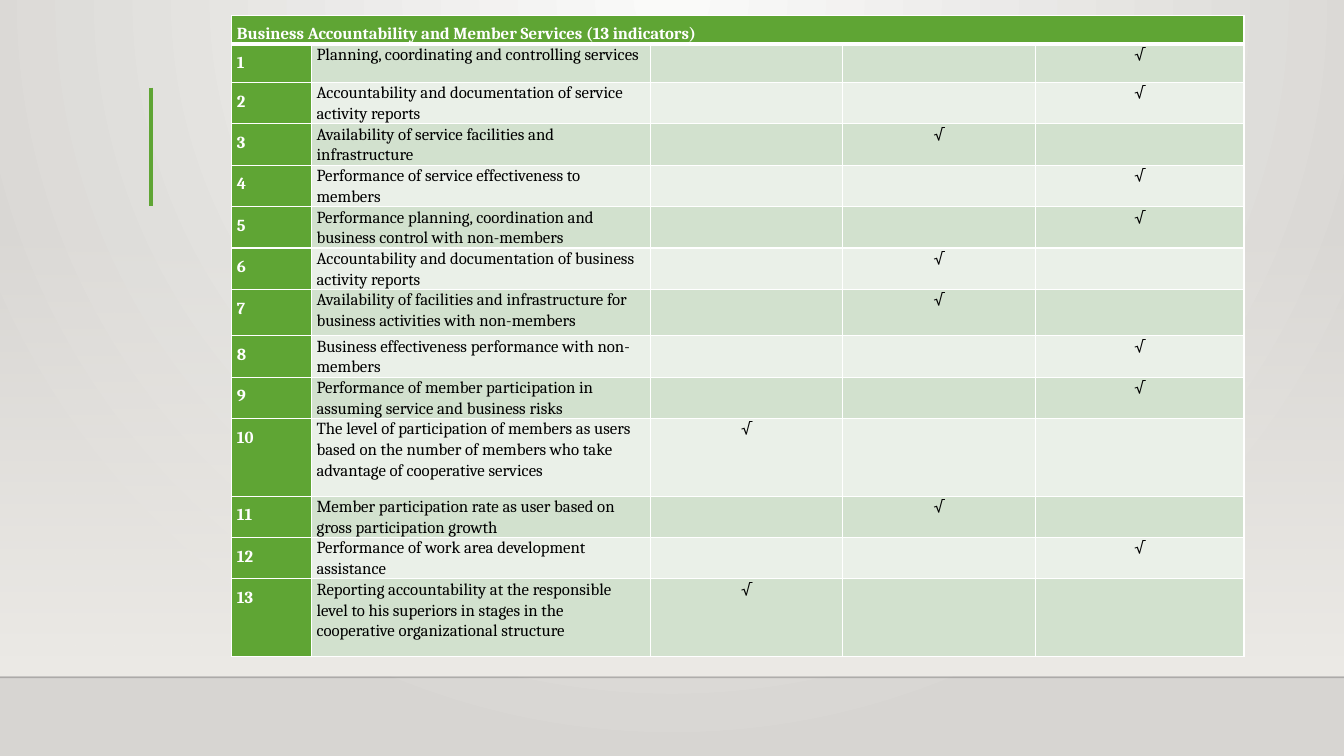
from lxml import etree
from pptx import Presentation
from pptx import util as u
from pptx.dml.color import RGBColor
from pptx.enum import shapes, text
from pptx.oxml import parse_xml
from pptx.oxml.ns import nsdecls, qn

GREEN = RGBColor(0x5F, 0xA5, 0x34)
BAND_DARK = RGBColor(0xD2, 0xE1, 0xCE)
BAND_LIGHT = RGBColor(0xEA, 0xF0, 0xE8)
WHITE = RGBColor(0xFF, 0xFF, 0xFF)
BLACK = RGBColor(0x00, 0x00, 0x00)
RULE = RGBColor(0x00, 0x00, 0x01)
SAND = RGBColor(0xED, 0xEB, 0xE7)
GLOW = RGBColor(0xFA, 0xFA, 0xF9)
EDGE = RGBColor(0xD7, 0xD5, 0xD2)

PX = 9144
WIDTH, HEIGHT = 1333, 750
TITLE = "Business Accountability and Member Services (13 indicators)"
COLUMNS = [79, 336, 191, 191, 207]
LOW, MIDDLE, HIGH = 2, 3, 4
INDICATORS = [
    ("Planning, coordinating and controlling services", HIGH, 38),
    ("Accountability and documentation of service activity reports", HIGH, 38),
    ("Availability of service facilities and infrastructure", MIDDLE, 38),
    ("Performance of service effectiveness to members", HIGH, 38),
    ("Performance planning, coordination and business control with non-members", HIGH, 38),
    ("Accountability and documentation of business activity reports", MIDDLE, 38),
    ("Availability of facilities and infrastructure for business activities with non-members", MIDDLE, 46),
    ("Business effectiveness performance with non-members", HIGH, 38),
    ("Performance of member participation in assuming service and business risks", HIGH, 38),
    ("The level of participation of members as users based on the number of members "
     "who take advantage of cooperative services", LOW, 77),
    ("Member participation rate as user based on gross participation growth", MIDDLE, 38),
    ("Performance of work area development assistance", HIGH, 38),
    ("Reporting accountability at the responsible level to his superiors in stages in the "
     "cooperative organizational structure", LOW, 77),
]


def write(frame, words, color=BLACK, bold=False, align=text.PP_ALIGN.LEFT, spacing=1.07):
    """Put one formatted line of text in a frame."""
    para = frame.paragraphs[0]
    para.alignment = align
    para.line_spacing = spacing
    span = para.add_run()
    span.text = words
    span.font.name = "Cambria"
    span.font.size = u.Pt(12)
    span.font.bold = bold
    span.font.color.rgb = color


def gradient(stops, direction):
    """Return a gradient fill from (position, colour, opacity) stops."""
    marks = "".join(
        f'<a:gs pos="{place * 1000}"><a:srgbClr val="{color}">'
        f'<a:alpha val="{opacity * 1000}"/></a:srgbClr></a:gs>'
        for place, color, opacity in stops)
    return parse_xml(f'<a:gradFill {nsdecls("a")} rotWithShape="1"><a:gsLst>{marks}</a:gsLst>'
                     f'{direction}</a:gradFill>')


class Painter:
    """Draw the elements of one slide in a shared style."""

    def __init__(self, page):
        """Keep the slide to draw on."""
        self.page = page

    def backdrop(self):
        """Fill the slide background with a glow from the top."""
        fill = self.page.background.fill
        fill.solid()
        fill.fore_color.rgb = EDGE
        solid = self.page.element.find(".//" + qn("p:bgPr") + "/" + qn("a:solidFill"))
        glow = gradient([(0, GLOW, 100), (100, EDGE, 100)],
                        '<a:path path="circle"><a:fillToRect l="43000" t="0" r="43000" b="100000"/></a:path>')
        solid.getparent().replace(solid, glow)

    def wall(self, left, top, width, height):
        """Add a rectangle that fades in downwards."""
        box = self.page.shapes.add_shape(
            shapes.MSO_SHAPE.RECTANGLE, left * PX, top * PX, width * PX, height * PX)
        box.shadow.inherit = False
        box.line.fill.background()
        properties = box.element.spPr
        properties.replace(properties.find(qn("a:noFill")) if properties.find(qn("a:noFill")) is not None
                           else self.plain(box), gradient([(0, SAND, 0), (100, SAND, 100)],
                                                          '<a:lin ang="5400000" scaled="0"/>'))

    def plain(self, box):
        """Give a shape a solid fill and return its element."""
        box.fill.solid()
        return box.element.spPr.find(qn("a:solidFill"))

    def line(self, start, end, color, points, opacity=100):
        """Add a straight line between two points."""
        link = self.page.shapes.add_connector(
            shapes.MSO_CONNECTOR.STRAIGHT, *(value * PX for value in start + end))
        link.line.color.rgb = color
        link.line.width = u.Pt(points)
        tone = link.element.spPr.find(".//" + qn("a:srgbClr"))
        etree.SubElement(tone, qn("a:alpha"), val=str(opacity * 1000))
        etree.SubElement(link.element.spPr, qn("a:effectLst"))

    def cell(self, cell, color, top=1, bottom=1):
        """Set the margins, borders and fill of a table cell."""
        cell.margin_left = cell.margin_right = 5 * PX
        cell.margin_top = cell.margin_bottom = 0
        properties = cell._tc.get_or_add_tcPr()
        for side, points in (("L", 1), ("R", 1), ("T", top), ("B", bottom)):
            border = etree.SubElement(properties, qn(f"a:ln{side}"), w=str(u.Pt(points)))
            paint = etree.SubElement(border, qn("a:solidFill"))
            etree.SubElement(paint, qn("a:srgbClr"), val=str(WHITE))
        cell.fill.solid()
        cell.fill.fore_color.rgb = color

    def scorecard(self, left, top):
        """Add the table of indicators with a tick for each score."""
        heights = [24] + [height for _, _, height in INDICATORS]
        table = self.page.shapes.add_table(
            len(heights), len(COLUMNS), left * PX, top * PX,
            sum(COLUMNS) * PX, sum(heights) * PX).table
        table.first_row = table.horz_banding = False
        for column, width in zip(table.columns, COLUMNS):
            column.width = width * PX
        for row, height in zip(table.rows, heights):
            row.height = height * PX
        heading = dict(color=WHITE, bold=True, align=text.PP_ALIGN.JUSTIFY, spacing=1.5)
        for cell in table.rows[0].cells:
            self.cell(cell, GREEN, bottom=3)
        table.cell(0, 0).merge(table.cell(0, len(COLUMNS) - 1))
        write(table.cell(0, 0).text_frame, TITLE, **heading)
        for number, (label, score, _) in enumerate(INDICATORS, 1):
            band = BAND_DARK if number % 2 else BAND_LIGHT
            for index, cell in enumerate(table.rows[number].cells):
                self.cell(cell, band if index else GREEN, top=3 if number == 1 else 1)
            write(table.cell(number, 0).text_frame, str(number), **heading)
            write(table.cell(number, 1).text_frame, label)
            write(table.cell(number, score).text_frame, "√", align=text.PP_ALIGN.CENTER)


def main():
    """Build the slide and save it."""
    deck = Presentation()
    deck.slide_width, deck.slide_height = WIDTH * PX, HEIGHT * PX
    painter = Painter(deck.slides.add_slide(deck.slide_layouts[6]))
    painter.backdrop()
    painter.wall(0, 220, WIDTH, 450)
    painter.line((0, 672), (WIDTH, 672), RULE, 1, opacity=20)
    painter.line((150, 87), (150, 204), GREEN, 3)
    painter.scorecard(230, 15)
    deck.save("out.pptx")


if __name__ == "__main__":
    main()
